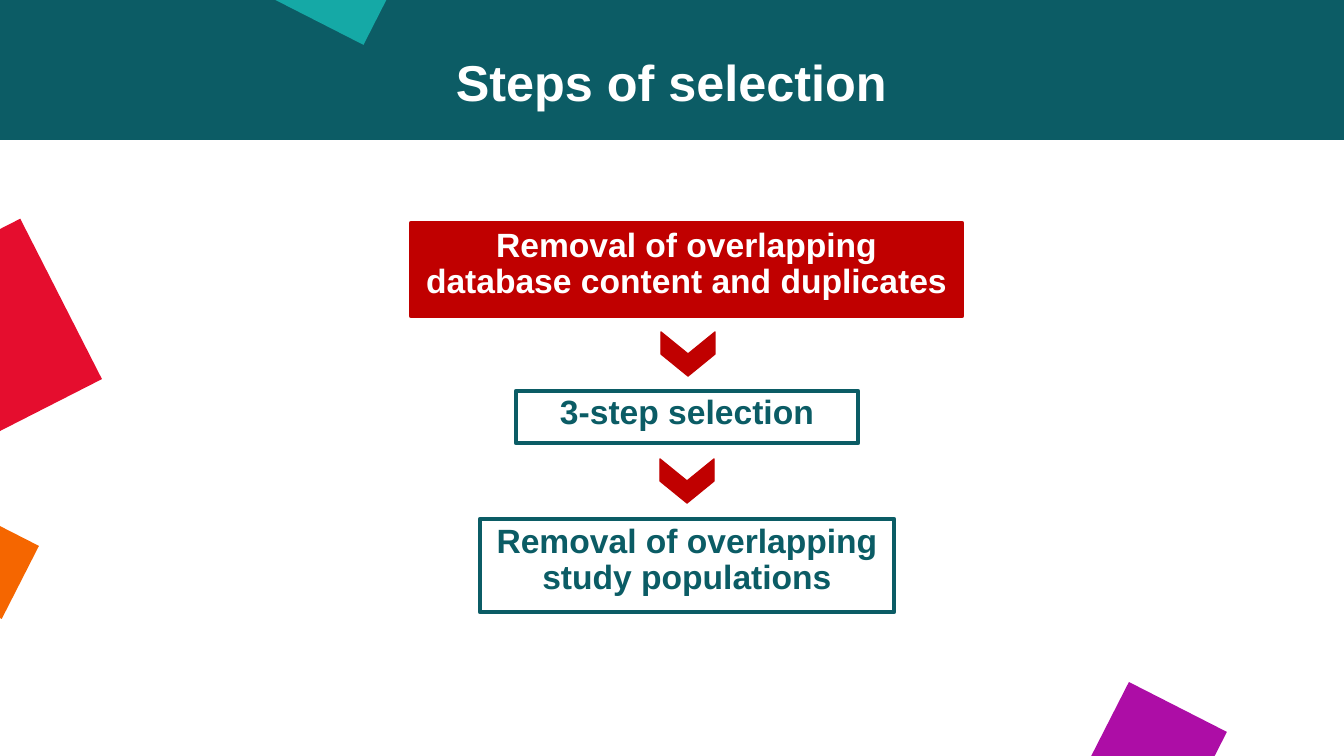
from lxml.etree import SubElement
from pptx import Presentation
from pptx.dml.color import RGBColor
from pptx.enum.shapes import MSO_SHAPE
from pptx.enum.text import MSO_ANCHOR, PP_ALIGN
from pptx.oxml.ns import qn
from pptx.util import Pt

PX = 914400 / 100.8  # EMU in one px

WHITE = RGBColor(0xFF, 0xFF, 0xFF)
BAND = RGBColor(0x0C, 0x5C, 0x65)
TEAL = RGBColor(0x0B, 0x5C, 0x65)
DARK_RED = RGBColor(0xC0, 0x00, 0x00)
RED = RGBColor(0xE5, 0x0D, 0x2E)
PURPLE = RGBColor(0xAD, 0x0D, 0xA6)
ORANGE = RGBColor(0xF5, 0x66, 0x00)
TURQUOISE = RGBColor(0x15, 0xA9, 0xA6)

deck = Presentation()
deck.slide_width, deck.slide_height = round(1344 * PX), round(756 * PX)
page = deck.slides.add_slide(deck.slide_layouts[5])


def add_block(kind, bounds, fill, line=None, line_width=1, rotation=0):
    block = page.shapes.add_shape(kind, *(round(length * PX) for length in bounds))
    block.shadow.inherit = False
    block.rotation = rotation
    block.fill.solid()
    block.fill.fore_color.rgb = fill
    if line is None:
        block.line.fill.background()
    else:
        block.line.color.rgb = line
        block.line.width = Pt(line_width)
    return block


def set_text(shape, text, size, color, anchor):
    frame = shape.text_frame
    frame.word_wrap = True
    frame.vertical_anchor = anchor
    frame.text = text
    para = frame.paragraphs[0]
    para.alignment = PP_ALIGN.CENTER
    para.line_spacing = 0.9
    para.font.name = "Arial"
    para.font.size = Pt(size)
    para.font.bold = True
    para.font.color.rgb = color


# Header band and tilted squares
for bounds, fill, rotation in [
    ((0, 0, 1344, 140), BAND, 0),
    ((-110, 250, 181, 180), RED, 333),
    ((1098, 701, 110, 110), PURPLE, 27),
    ((-61, 522, 86, 82), ORANGE, 27),
    ((293, -74, 99, 102), TURQUOISE, 27),
]:
    add_block(MSO_SHAPE.RECTANGLE, bounds, fill, rotation=rotation)

# Title, brought in front of the band
title = page.shapes.title
title.left, title.top = round(273 * PX), round(50 * PX)
title.width, title.height = round(797 * PX), round(71 * PX)
set_text(title, "Steps of selection", 36, WHITE, MSO_ANCHOR.MIDDLE)
page.shapes.element.append(title.element)

# Selection steps
for text, bounds, fill, line, color in [
    ("Removal of overlapping database content and duplicates",
     (411, 223, 551, 93), DARK_RED, DARK_RED, WHITE),
    ("3-step selection", (516, 391, 342, 52), WHITE, TEAL, TEAL),
    ("Removal of overlapping study populations",
     (480, 519, 414, 93), WHITE, TEAL, TEAL),
]:
    box = add_block(MSO_SHAPE.RECTANGLE, bounds, fill, line, 3.25)
    SubElement(box.line.fill._xPr, qn("a:round"))
    set_text(box, text, 24, color, MSO_ANCHOR.TOP)

# Chevrons pointing down between the steps
for left, top in [(666, 327), (665, 454)]:
    add_block(MSO_SHAPE.CHEVRON, (left, top, 44, 54), DARK_RED, DARK_RED, rotation=90)

deck.save("out.pptx")
